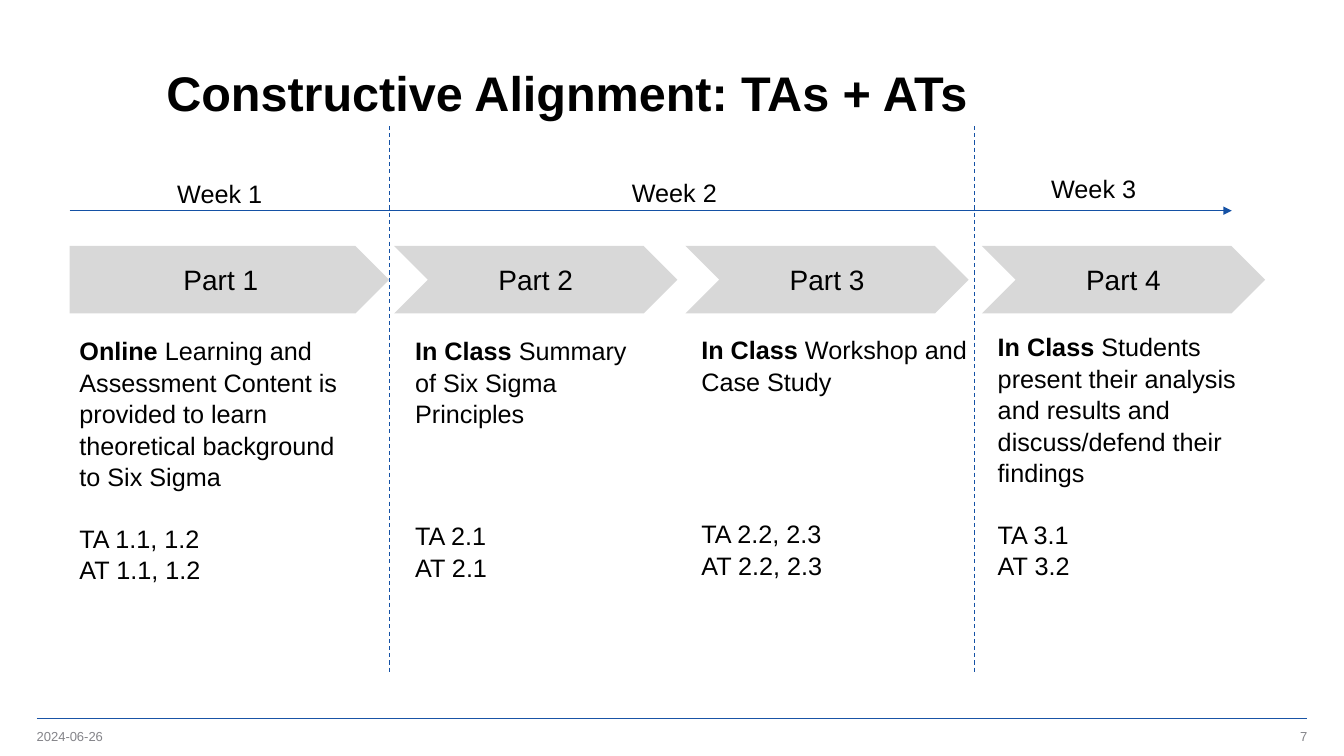
from dataclasses import dataclass

from lxml.etree import SubElement
from pptx import Presentation
from pptx.dml.color import RGBColor
from pptx.enum.dml import MSO_LINE
from pptx.enum.shapes import MSO_CONNECTOR, MSO_SHAPE
from pptx.enum.text import MSO_ANCHOR, PP_ALIGN
from pptx.oxml.ns import qn
from pptx.util import Inches, Pt


@dataclass(frozen=True)
class Theme:
    """Colours, font and type sizes of the slide."""

    font: str = "Arial"
    ink: str = "000000"
    muted: str = "848489"
    arrow_fill: str = "D8D8D8"
    rule: str = "1954A6"
    timeline: str = "1451A5"
    title_size: float = 34.7
    arrow_size: float = 20
    body_size: float = 18
    footer_size: float = 9.3
    body_spacing: float = 1.04
    body_line: float = 21.6


@dataclass(frozen=True)
class Box:
    """A rectangle on a grid whose cells are a tenth of an inch."""

    left: float
    top: float
    width: float
    height: float

    def inner(self, left, top, width, height):
        """Return a box offset from this one's corner."""
        return Box(self.left + left, self.top + top, width, height)

    def lengths(self):
        """Return the four slide lengths."""
        return [Inches(cells / 10) for cells in (self.left, self.top, self.width, self.height)]


@dataclass(frozen=True)
class Step:
    """One step of the course with its arrow and description."""

    name: str
    left: float
    width: float
    text_left: float
    text_top: float
    text_width: float
    mode: str
    summary: str
    summary_lines: int
    activities: str
    assessments: str
    arrow: MSO_SHAPE = MSO_SHAPE.CHEVRON


THEME = Theme()
SLIDE_BOX = Box(0, 0, 133.33, 75)
TIMELINE_BOX = Box(6.9, 12.5, 118.6, 54.2)
WEEKS = [("Week 1", 9.7, 4.6), ("Week 2", 54.8, 4.5), ("Week 3", 96.4, 4.1)]
WEEK_BORDERS = [31.7, 89.8]
DETAIL_LINES = 6
STEPS = [
    Step("Part 1", 0, 31.7, 0, 20.2, 30, "Online",
         " Learning and Assessment Content is provided to learn theoretical background to Six Sigma",
         5, "TA 1.1, 1.2", "AT 1.1, 1.2", MSO_SHAPE.PENTAGON),
    Step("Part 2", 32.2, 28.1, 33.3, 20.2, 24.8, "In Class",
         " Summary of Six Sigma Principles", 3, "TA 2.1", "AT 2.1"),
    Step("Part 3", 61.1, 28.1, 61.7, 20.1, 30, "In Class",
         " Workshop and Case Study", 2, "TA 2.2, 2.3", "AT 2.2, 2.3"),
    Step("Part 4", 90.5, 28.1, 91.1, 19.8, 30, "In Class",
         " Students present their analysis and results and discuss/defend their findings",
         5, "TA 3.1", "AT 3.2"),
]


def style_paragraph(paragraph, size, color=THEME.ink, align=PP_ALIGN.LEFT, spacing=1.0):
    """Format a paragraph and all its runs."""
    paragraph.alignment = align
    paragraph.line_spacing = spacing
    for run in paragraph.runs:
        run.font.name = THEME.font
        run.font.size = Pt(size)
        run.font.color.rgb = RGBColor.from_string(color)


def add_text_box(slide, box):
    """Add an empty wrapping text box and return its text frame."""
    text_frame = slide.shapes.add_textbox(*box.lengths()).text_frame
    text_frame.word_wrap = True
    return text_frame


def add_line(slide, box, color, width):
    """Draw a straight line across the box and return it."""
    left, top, across, down = box.lengths()
    line = slide.shapes.add_connector(
        MSO_CONNECTOR.STRAIGHT, left, top, left + across, top + down)
    line.line.color.rgb = RGBColor.from_string(color)
    line.line.width = Pt(width)
    SubElement(line._element.spPr, qn("a:effectLst"))
    return line


def add_title(slide, box):
    """Place and format the title placeholder."""
    title = slide.shapes.title
    title.left, title.top, title.width, title.height = box.lengths()
    title.text_frame.text = "Constructive Alignment: TAs + ATs"
    title.text_frame.vertical_anchor = MSO_ANCHOR.MIDDLE
    paragraph = title.text_frame.paragraphs[0]
    style_paragraph(paragraph, THEME.title_size, spacing=1.18)
    paragraph.runs[0].font.bold = True


def add_footer(slide, box):
    """Add the rule, the date and the page number."""
    add_line(slide, box.inner(0, 0, box.width, 0), THEME.rule, 1)
    labels = [("2024-06-26", 0, PP_ALIGN.LEFT), ("7", box.width - 30, PP_ALIGN.RIGHT)]
    for label, left, align in labels:
        text_frame = add_text_box(slide, box.inner(left, 0.9, 30, 1.7))
        text_frame.margin_left = text_frame.margin_right = 0
        text_frame.margin_top = text_frame.margin_bottom = 0
        text_frame.vertical_anchor = MSO_ANCHOR.MIDDLE
        text_frame.text = label
        style_paragraph(text_frame.paragraphs[0], THEME.footer_size, THEME.muted, align)


def add_weeks(slide, box):
    """Add the time arrow, the week borders and the week names."""
    arrow = add_line(slide, box.inner(0, 8.4, 115.3, 0), THEME.timeline, 0.75)
    SubElement(arrow._element.spPr.find(qn("a:ln")), qn("a:tailEnd"), type="triangle")
    for left in WEEK_BORDERS:
        border = add_line(slide, box.inner(left, 0, 0, box.height), THEME.timeline, 0.75)
        border.line.dash_style = MSO_LINE.DASH
    for name, left, top in WEEKS:
        text_frame = add_text_box(slide, box.inner(left, top, 10.5, 4))
        text_frame.text = name
        style_paragraph(text_frame.paragraphs[0], THEME.body_size, spacing=THEME.body_spacing)


def add_step(slide, box, step):
    """Add the arrow and the description of one step."""
    arrow = slide.shapes.add_shape(
        step.arrow, *box.inner(step.left, 11.9, step.width, 6.7).lengths())
    arrow.shadow.inherit = False
    arrow.fill.solid()
    arrow.fill.fore_color.rgb = RGBColor.from_string(THEME.arrow_fill)
    arrow.line.fill.background()
    arrow.text_frame.text = step.name
    arrow.text_frame.vertical_anchor = MSO_ANCHOR.MIDDLE
    style_paragraph(arrow.text_frame.paragraphs[0], THEME.arrow_size, align=PP_ALIGN.CENTER)

    text_frame = add_text_box(
        slide, box.inner(step.text_left, step.text_top, step.text_width, 25.2))
    text_frame.text = "\n".join([step.mode, step.activities, step.assessments])
    summary, activities, _ = text_frame.paragraphs
    summary.runs[0].font.bold = True
    summary.add_run().text = step.summary
    activities.space_before = Pt((DETAIL_LINES - step.summary_lines) * THEME.body_line)
    for paragraph in text_frame.paragraphs:
        style_paragraph(paragraph, THEME.body_size, spacing=THEME.body_spacing)


def main():
    """Build and save the presentation."""
    presentation = Presentation()
    _, _, presentation.slide_width, presentation.slide_height = SLIDE_BOX.lengths()
    slide = presentation.slides.add_slide(presentation.slide_layouts[5])
    add_footer(slide, SLIDE_BOX.inner(3.65, 71.3, 126.05, 2.6))
    add_title(slide, SLIDE_BOX.inner(15.5, 3.7, 110.1, 9.8))
    add_weeks(slide, TIMELINE_BOX)
    for step in STEPS:
        add_step(slide, TIMELINE_BOX, step)
    presentation.save("out.pptx")


if __name__ == "__main__":
    main()
